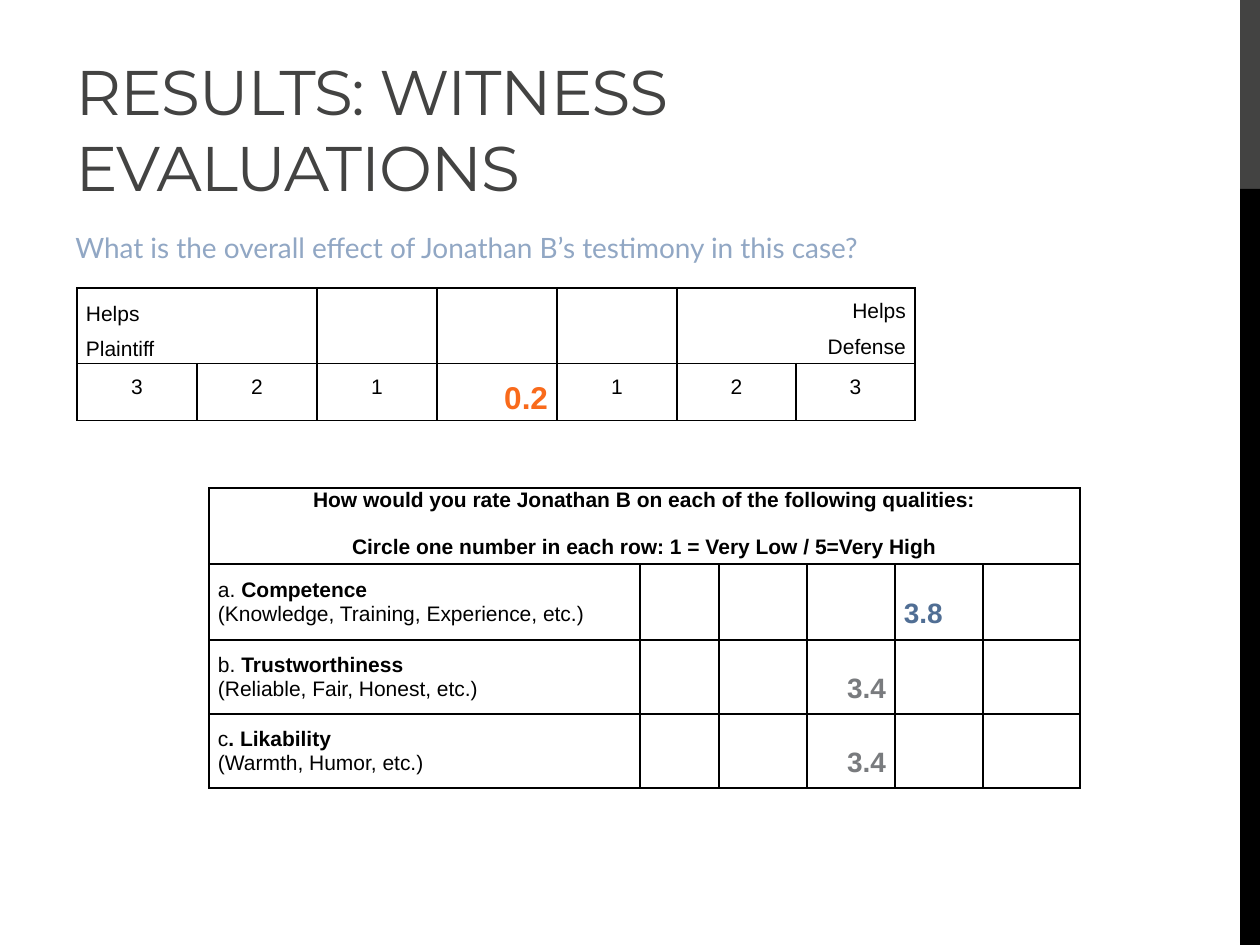
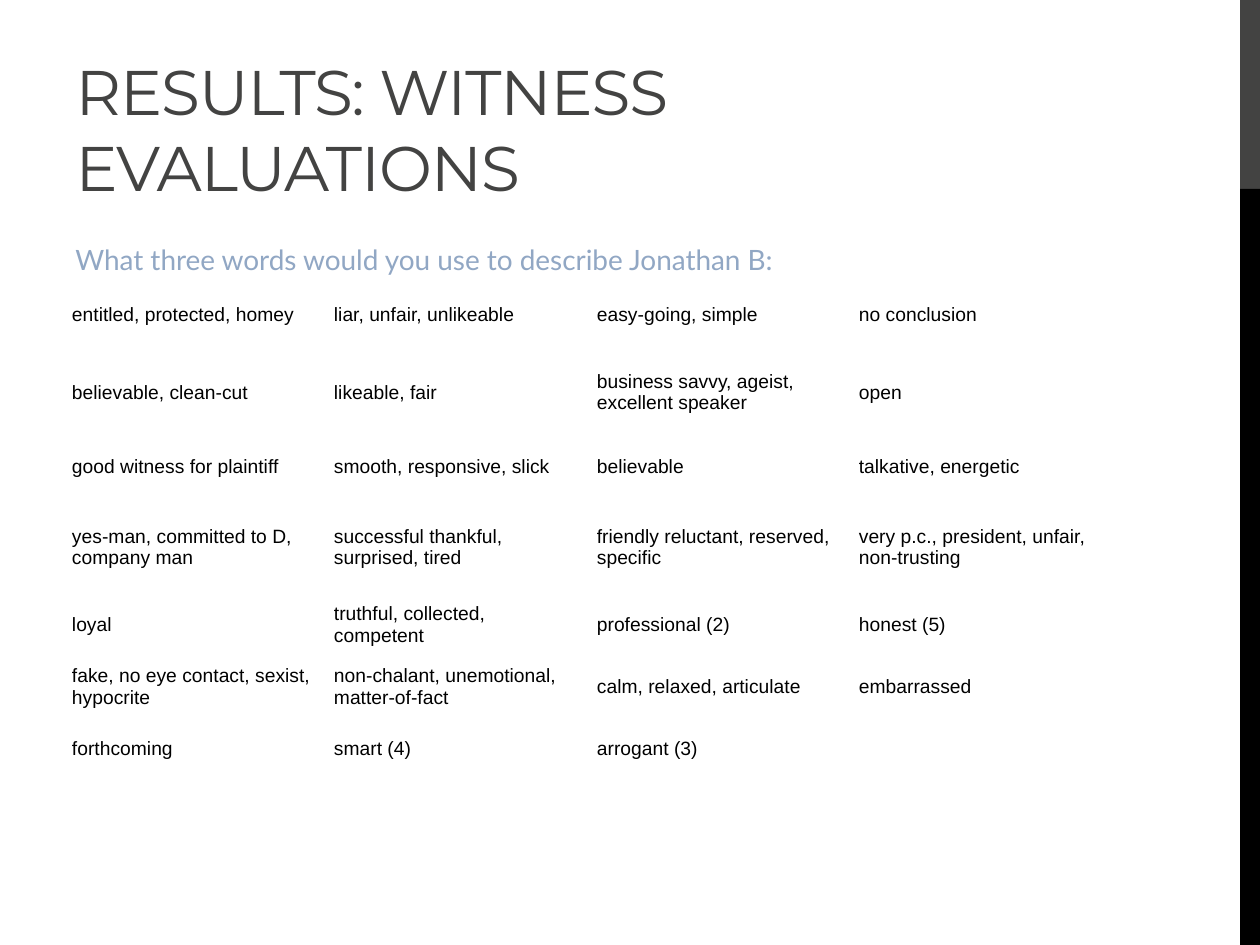
"""Build two slides of witness evaluation results."""
from dataclasses import dataclass
from typing import NamedTuple

from lxml.etree import SubElement as Sub
from pptx import Presentation
from pptx.dml.color import RGBColor
from pptx.enum.shapes import MSO_SHAPE as Shape
from pptx.enum.text import MSO_ANCHOR as Anchor, MSO_AUTO_SIZE as Fit, PP_ALIGN as Align
from pptx.oxml.ns import qn
from pptx.util import Pt

SCALE = 914400 / 126
BLACK = RGBColor(0x00, 0x00, 0x00)
DARK = RGBColor(0x43, 0x43, 0x42)
PALE = RGBColor(0x91, 0xA7, 0xC4)
ORANGE = RGBColor(0xF9, 0x6A, 0x1B)
BLUE = RGBColor(0x50, 0x6E, 0x94)
GRAY = RGBColor(0x79, 0x7B, 0x7E)
TITLE = "RESULTS: WITNESS EVALUATIONS"


class Box(NamedTuple):
    left: int
    top: int
    width: int
    height: int


class Band(NamedTuple):
    box: Box
    color: RGBColor


@dataclass
class Cell:
    row: int
    col: int
    lines: tuple[tuple[str, ...], ...]
    size: int = 12
    color: RGBColor = BLACK
    bold: bool = False
    align: Align = Align.LEFT
    anchor: Anchor = Anchor.MIDDLE
    top: int = 0
    spacing: float = 1.0
    gap: float = 0
    span: int = 1


@dataclass
class Grid:
    left: int
    top: int
    cols: tuple[int, ...]
    rows: tuple[int, ...]
    cells: list[Cell]
    lined: bool = True


BANDS = (Band(Box(1240, 0, 20, 189), DARK), Band(Box(1240, 189, 20, 756), BLACK))
WORDS = (
    ("entitled, protected, homey", "liar, unfair, unlikeable", "easy-going, simple", "no conclusion"),
    ("believable, clean-cut", "likeable, fair", "business savvy, ageist, excellent speaker", "open"),
    ("good witness for plaintiff", "smooth, responsive, slick", "believable", "talkative, energetic"),
    ("yes-man, committed to D, company man", "successful thankful, surprised, tired",
     "friendly reluctant, reserved, specific", "very p.c., president, unfair, non-trusting"),
    ("loyal", "truthful, collected, competent", "professional (2)", "honest (5)"),
    ("fake, no eye contact, sexist, hypocrite", "non-chalant, unemotional, matter-of-fact",
     "calm, relaxed, articulate", "embarrassed"),
    ("forthcoming", "smart (4)", "arrogant (3)"),
)
TRAITS = (
    ("a. ", "Competence", "(Knowledge, Training, Experience, etc.)"),
    ("b. ", "Trustworthiness", "(Reliable, Fair, Honest, etc.)"),
    ("c", ". Likability", "(Warmth, Humor, etc.)"),
)


def px(value: int) -> int:
    """Turn px into EMU."""
    return round(value * SCALE)


def place(item, box: Box) -> None:
    """Move and size a shape."""
    item.left, item.top, item.width, item.height = map(px, box)


def style(para, name: str, size: int, color: RGBColor) -> None:
    """Set the font of a paragraph."""
    font = para.font
    font.name, font.size = name, Pt(size)
    font.color.rgb = color


def add_base(deck, query: str, top: int, width: int):
    """Add a slide with its bands, title and question."""
    slide = deck.slides.add_slide(deck.slide_layouts[5])
    for band in BANDS:
        shape = slide.shapes.add_shape(Shape.RECTANGLE, *map(px, band.box))
        shape.shadow.inherit = False
        shape.fill.solid()
        shape.fill.fore_color.rgb = band.color
        shape.line.fill.background()
    title = slide.shapes.title
    place(title, Box(63, 21, 798, 189))
    frame = title.text_frame
    frame.text, frame.word_wrap = TITLE, True
    frame.auto_size, frame.vertical_anchor = Fit.NONE, Anchor.BOTTOM
    para = frame.paragraphs[0]
    para.alignment = Align.LEFT
    style(para, "Montserrat", 36, DARK)
    para.runs[0]._r.get_or_add_rPr().set("spc", "-60")
    frame = slide.shapes.add_textbox(*map(px, Box(63, top, width, 84))).text_frame
    frame.text, frame.word_wrap = query, True
    style(frame.paragraphs[0], "Lato", 16, PALE)
    return slide


def add_lines(cell) -> None:
    """Draw the four borders of a table cell."""
    props = cell._tc.get_or_add_tcPr()
    for rank, side in enumerate(("lnL", "lnR", "lnT", "lnB")):
        line = Sub(props, qn(f"a:{side}"), w=str(Pt(1)))
        fill = Sub(line, qn("a:solidFill"))
        Sub(fill, qn("a:srgbClr"), val=str(BLACK))
        props.remove(line)
        props.insert(rank, line)


def fill_cell(table, data: Cell) -> None:
    """Write the text of one cell."""
    cell = table.cell(data.row, data.col)
    if data.span > 1:
        cell.merge(table.cell(data.row, data.col + data.span - 1))
    cell.vertical_anchor = data.anchor
    cell.margin_left = cell.margin_right = px(9)
    cell.margin_top, cell.margin_bottom = px(data.top), 0
    frame = cell.text_frame
    for rank, parts in enumerate(data.lines):
        para = frame.add_paragraph() if rank else frame.paragraphs[0]
        para.alignment, para.line_spacing = data.align, data.spacing
        if rank and data.gap:
            para.space_before = Pt(data.gap)
        style(para, "Arial", data.size, data.color)
        para.font.bold = data.bold
        for part in parts:
            para.add_run().text = part
        if len(parts) > 1:
            para.runs[1].font.bold = True


def add_grid(slide, grid: Grid) -> None:
    """Add a table with its cells."""
    box = Box(grid.left, grid.top, sum(grid.cols), sum(grid.rows))
    table = slide.shapes.add_table(len(grid.rows), len(grid.cols), *map(px, box)).table
    table.first_row = table.horz_banding = False
    for col, width in zip(table.columns, grid.cols):
        col.width = px(width)
    for row, height in zip(table.rows, grid.rows):
        row.height = px(height)
    for cell in table.iter_cells():
        cell.fill.background()
        if grid.lined:
            add_lines(cell)
    for data in grid.cells:
        fill_cell(table, data)


def scale_grid() -> Grid:
    """Lay out the scale from plaintiff to defense."""
    cells = [
        Cell(0, 0, (("Helps",), ("Plaintiff",)), spacing=1.5, span=2),
        Cell(0, 5, (("Helps",), ("Defense",)), align=Align.RIGHT, anchor=Anchor.TOP,
             spacing=1.5, span=2),
        Cell(1, 3, (("0.2",),), 18, ORANGE, True, Align.RIGHT, Anchor.TOP, spacing=1.5),
    ]
    cells += [Cell(1, col, ((str(abs(col - 3)),),), align=Align.CENTER,
                   anchor=Anchor.TOP, spacing=1.5) for col in range(7) if col != 3]
    return Grid(77, 288, (120,) * 5 + (119,) * 2, (74, 53), cells)


def trait_grid() -> Grid:
    """Lay out the ratings of each trait."""
    head = (("How would you rate Jonathan B on each of the following qualities:",),
            ("Circle one number in each row: 1 = Very Low / 5=Very High",))
    cells = [Cell(0, 0, head, bold=True, align=Align.CENTER, anchor=Anchor.TOP,
                  gap=13.8, span=6)]
    for row, (mark, name, note) in enumerate(TRAITS, 1):
        cells.append(Cell(row, 0, ((mark, name), (note,))))
    cells.append(Cell(1, 4, (("3.8",),), 16, BLUE, True, top=24))
    cells += [Cell(row, 3, (("3.4",),), 16, GRAY, True, Align.RIGHT, top=24) for row in (2, 3)]
    return Grid(209, 488, (431, 79, 88, 88, 88, 97), (76, 76, 74, 74), cells)


def word_grid() -> Grid:
    """Lay out the words used for the witness."""
    cells = [Cell(row, col, ((text,),), 11)
             for row, texts in enumerate(WORDS) for col, text in enumerate(texts)]
    return Grid(63, 278, (262, 263) * 2, (74, 81, 68, 93, 62, 62, 62), cells, False)


def main() -> None:
    """Build and save the deck."""
    deck = Presentation()
    deck.slide_width, deck.slide_height = px(1260), px(945)
    slide = add_base(deck, "What is the overall effect of Jonathan B’s testimony in this case?", 224, 819)
    add_grid(slide, scale_grid())
    add_grid(slide, trait_grid())
    slide = add_base(deck, "What three words would you use to describe Jonathan B:", 236, 741)
    add_grid(slide, word_grid())
    deck.save("out.pptx")


if __name__ == "__main__":
    main()
